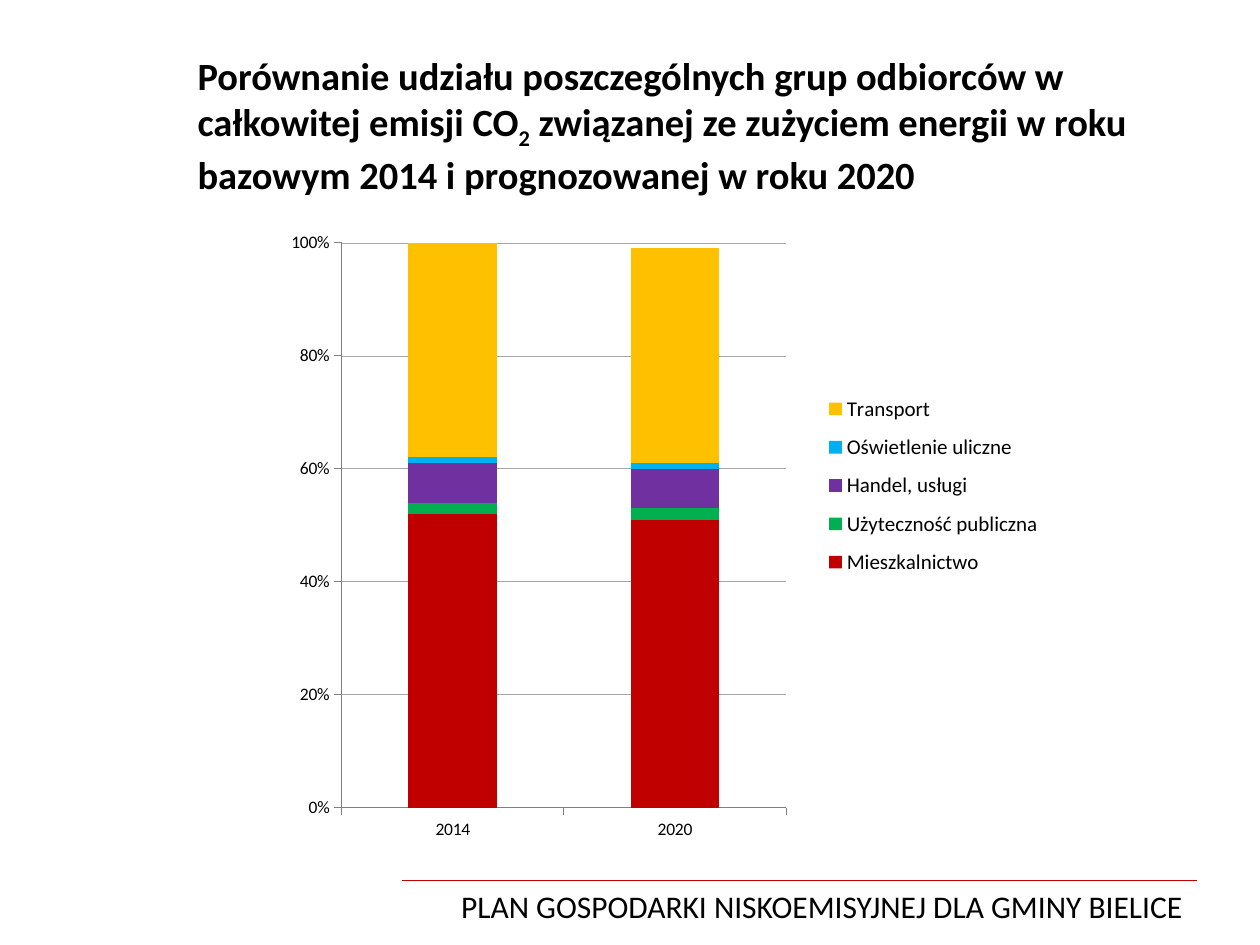
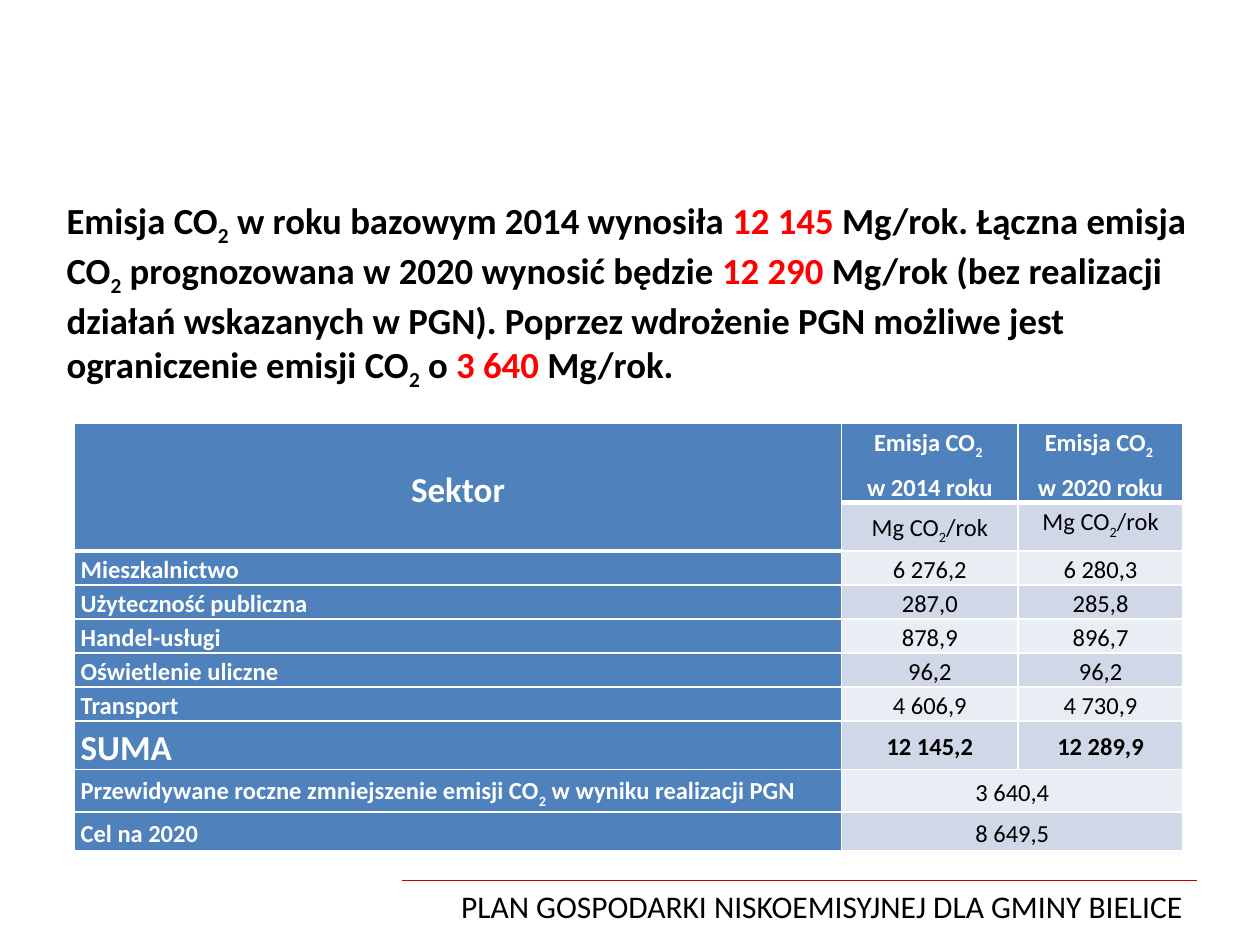
from lxml.etree import SubElement
from pptx import Presentation
from pptx.chart.data import CategoryChartData
from pptx.dml.color import RGBColor
from pptx.enum.chart import XL_CHART_TYPE, XL_LEGEND_POSITION, XL_TICK_MARK
from pptx.enum.shapes import MSO_CONNECTOR
from pptx.enum.text import MSO_ANCHOR, PP_ALIGN
from pptx.oxml import parse_xml
from pptx.oxml.ns import nsdecls, qn
from pptx.util import Inches, Pt

FONT = "Calibri"
BLACK = RGBColor(0x00, 0x00, 0x00)
WHITE = RGBColor(0xFF, 0xFF, 0xFF)
RED = RGBColor(0xFF, 0x00, 0x00)
DARK_RED = RGBColor(0xC0, 0x00, 0x00)
GREEN = RGBColor(0x00, 0xB0, 0x50)
PURPLE = RGBColor(0x70, 0x30, 0xA0)
SKY_BLUE = RGBColor(0x00, 0xB0, 0xF0)
AMBER = RGBColor(0xFF, 0xC0, 0x00)
AXIS_GREY = RGBColor(0x80, 0x80, 0x80)
GRID_GREY = RGBColor(0xA6, 0xA6, 0xA6)
HEADER_BLUE = RGBColor(0x4F, 0x81, 0xBD)
BAND_DARK = RGBColor(0xD0, 0xD8, 0xE8)
BAND_LIGHT = RGBColor(0xE9, 0xED, 0xF4)

# Markup: ~subscript~, *red*, | starts a new paragraph.
FOOTER = "PLAN GOSPODARKI NISKOEMISYJNEJ DLA GMINY BIELICE"
CHART_TITLE = ("Porównanie udziału poszczególnych grup odbiorców w całkowitej emisji CO~2~ "
               "związanej ze zużyciem energii w roku bazowym 2014 i prognozowanej w roku 2020")
SUMMARY = ("Emisja CO~2~ w roku bazowym 2014 wynosiła *12 145 *Mg/rok. Łączna emisja CO~2~ "
           "prognozowana w 2020 wynosić będzie *12 290 *Mg/rok (bez realizacji działań "
           "wskazanych w PGN). Poprzez wdrożenie PGN możliwe jest ograniczenie emisji "
           "CO~2~ o *3 640 *Mg/rok.")

YEARS = ["2014", "2020"]
SHARES = [
    ("Mieszkalnictwo", (0.52, 0.51), DARK_RED),
    ("Użyteczność publiczna", (0.02, 0.02), GREEN),
    ("Handel, usługi", (0.07, 0.07), PURPLE),
    ("Oświetlenie uliczne", (0.01, 0.01), SKY_BLUE),
    ("Transport", (0.38, 0.38), AMBER),
]
PLOT_LAYOUT = {"x": 0.132, "y": 0.068, "w": 0.539, "h": 0.854}
LEGEND_LAYOUT = {"x": 0.71, "y": 0.28, "w": 0.28, "h": 0.31}

EMISSIONS = [
    ("Sektor", "Emisja CO~2 ~|w 2014 roku", "Emisja CO~2 ~|w 2020 roku"),
    (None, "Mg CO~2~/rok", "Mg CO~2~/rok"),
    ("Mieszkalnictwo", "6 276,2", "6 280,3"),
    ("Użyteczność publiczna", "287,0", "285,8"),
    ("Handel-usługi", "878,9", "896,7"),
    ("Oświetlenie uliczne", "96,2", "96,2"),
    ("Transport", "4 606,9", "4 730,9"),
    ("SUMA", "12 145,2", "12 289,9"),
    ("Przewidywane roczne zmniejszenie emisji CO~2~ w wyniku realizacji PGN", "3 640,4", None),
    ("Cel na 2020", "8 649,5", None),
]
COLUMN_WIDTHS = [6.09, 1.4, 1.31]
ROW_HEIGHTS = [0.62] + [0.27] * 7 + [0.34, 0.31]
MERGES = [((0, 0), (1, 0)), ((8, 1), (8, 2)), ((9, 1), (9, 2))]
LARGE_LABELS = ("Sektor", "SUMA")


def apply(target, values):
    for name, value in values.items():
        setattr(target, name, value)


def style_font(font, size, color=BLACK, bold=False):
    apply(font, {"name": FONT, "size": Pt(size), "bold": bold})
    font.color.rgb = color


def write_text(frame, text, size, color=BLACK, bold=False, paragraph_format=None):
    for number, line in enumerate(text.split("|")):
        paragraph = frame.add_paragraph() if number else frame.paragraphs[0]
        apply(paragraph, paragraph_format or {})
        if number and paragraph_format:
            paragraph.space_before = Pt(2)
        for red, section in enumerate(line.split("*")):
            for subscript, part in enumerate(section.split("~")):
                if not part:
                    continue
                run = paragraph.add_run()
                run.text = part
                style_font(run.font, size, RED if red % 2 else color, bold)
                if subscript % 2:
                    run._r.get_or_add_rPr().set("baseline", "-25000")


def add_text(slide, box, text, size, bold=False, anchor=MSO_ANCHOR.MIDDLE, left_inset=0.1):
    frame = slide.shapes.add_textbox(*map(Inches, box)).text_frame
    apply(frame, {"word_wrap": True, "vertical_anchor": anchor,
                  "margin_left": Inches(left_inset)})
    write_text(frame, text, size, bold=bold)


def add_slide(presentation):
    slide = presentation.slides.add_slide(presentation.slide_layouts[6])
    rule = slide.shapes.add_connector(
        MSO_CONNECTOR.STRAIGHT, *map(Inches, (3.19, 6.99, 9.5, 6.99)))
    rule.line.color.rgb = DARK_RED
    rule.line.width = Pt(0.75)
    SubElement(rule._element.spPr, qn("a:effectLst"))
    add_text(slide, (3.5, 6.99, 6.31, 0.4), FOOTER, 18,
             anchor=MSO_ANCHOR.TOP, left_inset=0.16)
    return slide


def layout_element(position, inner=False):
    target = '<c:layoutTarget val="inner"/>' if inner else ""
    modes = "".join(f'<c:{axis}Mode val="edge"/>' for axis in "xy")
    values = "".join(f'<c:{key} val="{value}"/>' for key, value in position.items())
    return parse_xml(f'<c:layout {nsdecls("c")}><c:manualLayout>{target}{modes}{values}'
                     '</c:manualLayout></c:layout>')


def set_layout(element, position, index, inner=False):
    for old in element.findall(qn("c:layout")):
        element.remove(old)
    element.insert(index, layout_element(position, inner))


def add_share_chart(slide):
    data = CategoryChartData(number_format="0%")
    data.categories = YEARS
    for name, values, _ in SHARES:
        data.add_series(name, values)
    chart = slide.shapes.add_chart(
        XL_CHART_TYPE.COLUMN_STACKED, *map(Inches, (1.85, 1.57, 6.54, 5.25)), data).chart
    chart.has_title = False
    style_font(chart.font, 10)

    plot = chart.plots[0]
    apply(plot, {"gap_width": 150, "overlap": 100, "vary_by_categories": False})
    for series, (_, _, color) in zip(plot.series, SHARES):
        series.format.fill.solid()
        series.format.fill.fore_color.rgb = color

    for axis in (chart.category_axis, chart.value_axis):
        apply(axis, {"major_tick_mark": XL_TICK_MARK.OUTSIDE,
                     "minor_tick_mark": XL_TICK_MARK.NONE})
        axis.format.line.color.rgb = AXIS_GREY
        axis.format.line.width = Pt(0.5)
    value_axis = chart.value_axis
    apply(value_axis, {"minimum_scale": 0, "maximum_scale": 1, "major_unit": 0.2,
                       "has_major_gridlines": True})
    apply(value_axis.tick_labels, {"number_format": "0%", "number_format_is_linked": False})
    grid_line = value_axis.major_gridlines.format.line
    grid_line.color.rgb = GRID_GREY
    grid_line.width = Pt(0.25)

    chart.has_legend = True
    apply(chart.legend, {"position": XL_LEGEND_POSITION.RIGHT, "include_in_layout": False})
    style_font(chart.legend.font, 12)
    set_layout(chart.legend._element, LEGEND_LAYOUT, 1)
    set_layout(chart._chartSpace.chart.plotArea, PLOT_LAYOUT, 0, inner=True)


def set_borders(cell, bottom_width):
    properties = cell._tc.get_or_add_tcPr()
    for side, width in (("L", 1), ("R", 1), ("T", 1), ("B", bottom_width)):
        border = SubElement(properties, qn(f"a:ln{side}"), w=str(Pt(width)))
        fill = SubElement(border, qn("a:solidFill"))
        SubElement(fill, qn("a:srgbClr"), val=str(WHITE))


def add_emission_table(slide):
    table = slide.shapes.add_table(
        len(EMISSIONS), len(COLUMN_WIDTHS), Inches(0.59), Inches(3.36),
        Inches(sum(COLUMN_WIDTHS)), Inches(sum(ROW_HEIGHTS))).table
    apply(table, {"first_row": False, "horz_banding": False})
    for column, width in zip(table.columns, COLUMN_WIDTHS):
        column.width = Inches(width)
    for row, height in zip(table.rows, ROW_HEIGHTS):
        row.height = Inches(height)

    for row, texts in enumerate(EMISSIONS):
        for column, text in enumerate(texts):
            cell = table.cell(row, column)
            heading = row == 0 or column == 0
            top = row < 2 and column == 2
            apply(cell, {"margin_left": Inches(0.05), "margin_right": Inches(0.05),
                         "margin_top": 0, "margin_bottom": 0,
                         "vertical_anchor": MSO_ANCHOR.TOP if top else MSO_ANCHOR.MIDDLE})
            set_borders(cell, 3 if row == 0 or (row, column) == (1, 0) else 1)
            cell.fill.solid()
            band = BAND_DARK if row % 2 else BAND_LIGHT
            cell.fill.fore_color.rgb = HEADER_BLUE if heading else band
            if text is None:
                continue
            centred = row == 0 or column > 0
            write_text(cell.text_frame, text, 20 if text in LARGE_LABELS else 14,
                       WHITE if heading else BLACK, heading or texts[0] == "SUMA",
                       {"alignment": PP_ALIGN.CENTER if centred else PP_ALIGN.LEFT,
                        "line_spacing": 1.15, "space_after": Pt(2)})
    for first, last in MERGES:
        table.cell(*first).merge(table.cell(*last))


def main():
    presentation = Presentation()
    presentation.slide_width = Inches(10)
    presentation.slide_height = Inches(7.5)

    share_slide = add_slide(presentation)
    add_text(share_slide, (1.47, 0.44, 7.95, 1.1), CHART_TITLE, 22, bold=True)
    add_share_chart(share_slide)

    emission_slide = add_slide(presentation)
    add_text(emission_slide, (0.43, 1.39, 9.21, 1.9), SUMMARY, 21, bold=True)
    add_emission_table(emission_slide)

    presentation.save("out.pptx")


if __name__ == "__main__":
    main()
